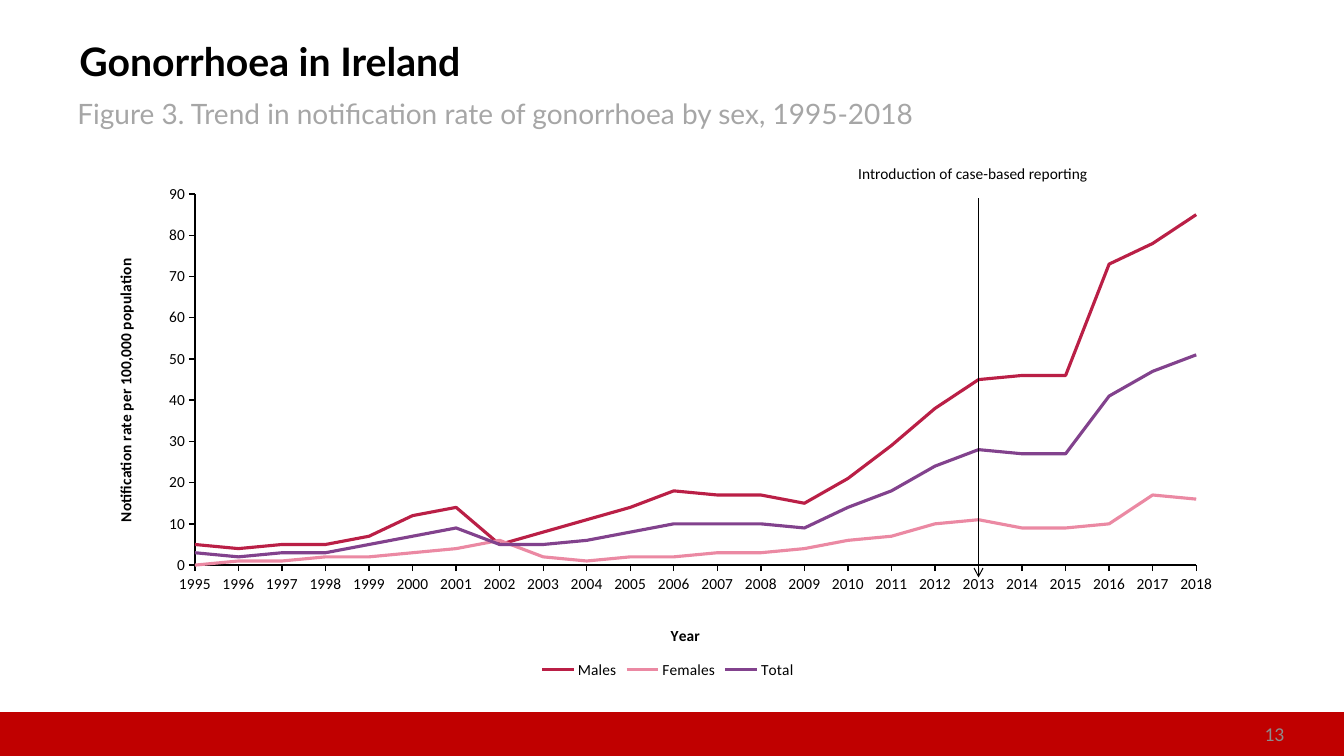
from dataclasses import dataclass

from lxml.etree import SubElement
from pptx import Presentation
from pptx.chart.data import CategoryChartData
from pptx.dml.color import RGBColor
from pptx.enum.chart import XL_CHART_TYPE, XL_LEGEND_POSITION, XL_TICK_MARK
from pptx.enum.shapes import MSO_CONNECTOR, MSO_SHAPE
from pptx.enum.text import MSO_ANCHOR, PP_ALIGN
from pptx.oxml.ns import qn
from pptx.util import Cm, Pt

COLORS = {
    "black": "000000",
    "red": "C00000",
    "subtitle": "A6A6A6",
    "number": "8C8C8C",
    "males": "BA1F46",
    "females": "EB89A3",
    "total": "82428D",
}


@dataclass
class Label:
    text: str
    box: tuple[float, float, float, float]
    size: float
    color: str
    font: str = "Calibri"
    bold: bool = False
    align: PP_ALIGN = PP_ALIGN.LEFT
    anchor: MSO_ANCHOR = MSO_ANCHOR.TOP
    inset: tuple[float, float] = (0.25, 0.13)


@dataclass
class Series:
    name: str
    color: str
    rates: list[int]


@dataclass
class AxisStyle:
    title: str
    title_x: float
    title_y: float


TITLE = Label("Gonorrhoea in Ireland", (1.7, 0.76, 26.24, 1.57), 28, "black", "Lato", True,
              anchor=MSO_ANCHOR.MIDDLE, inset=(0.3, 0.15))
LABELS = [
    Label("13", (24.77, 17.98, 7.9, 1.02), 14, "number", align=PP_ALIGN.RIGHT,
          anchor=MSO_ANCHOR.MIDDLE, inset=(0.3, 0.15)),
    Label("Figure 3. Trend in notification rate of gonorrhoea by sex, 1995-2018",
          (1.7, 2.31, 30.48, 1.12), 20, "subtitle", "Lato"),
    Label("Introduction of case-based reporting", (20.52, 4.01, 8, 0.74), 11, "black",
          align=PP_ALIGN.CENTER),
]
SERIES = [
    Series("Males", "males", [5, 4, 5, 5, 7, 12, 14, 5, 8, 11, 14, 18,
                              17, 17, 15, 21, 29, 38, 45, 46, 46, 73, 78, 85]),
    Series("Females", "females", [0, 1, 1, 2, 2, 3, 4, 6, 2, 1, 2, 2,
                                  3, 3, 4, 6, 7, 10, 11, 9, 9, 10, 17, 16]),
    Series("Total", "total", [3, 2, 3, 3, 5, 7, 9, 5, 5, 6, 8, 10,
                              10, 10, 9, 14, 18, 24, 28, 27, 27, 41, 47, 51]),
]
YEAR_AXIS = AxisStyle("Year", 0.5, 0.88)
RATE_AXIS = AxisStyle("Notification rate per 100,000 population", 0.01, 0.16)


def rgb(name: str) -> RGBColor:
    return RGBColor.from_string(COLORS[name])


def set_font(font, size: float, color: str, name: str = "Calibri", bold: bool = False) -> None:
    font.size, font.name, font.bold = Pt(size), name, bold
    font.color.rgb = rgb(color)


def write_label(sp, label: Label) -> None:
    sp.left, sp.top, sp.width, sp.height = (Cm(v) for v in label.box)
    tf = sp.text_frame
    tf.word_wrap = True
    tf.vertical_anchor = label.anchor
    tf.margin_left = tf.margin_right = Cm(label.inset[0])
    tf.margin_top = tf.margin_bottom = Cm(label.inset[1])
    p = tf.paragraphs[0]
    p.alignment = label.align
    r = p.add_run()
    r.text = label.text
    set_font(r.font, label.size, label.color, label.font, label.bold)


def place(parent, index: int, **fractions: float) -> None:
    """Give a chart part a manual layout in fractions of the chart."""
    for old in parent.findall(qn("c:layout")):
        parent.remove(old)
    layout = SubElement(parent, qn("c:layout"))
    parent.insert(index, layout)
    manual = SubElement(layout, qn("c:manualLayout"))
    if "w" in fractions:
        SubElement(manual, qn("c:layoutTarget")).set("val", "inner")
    for key in ("x", "y"):
        SubElement(manual, qn(f"c:{key}Mode")).set("val", "edge")
    for key, value in fractions.items():
        SubElement(manual, qn(f"c:{key}")).set("val", str(value))


def style_axis(axis, style: AxisStyle) -> None:
    axis.has_major_gridlines = False
    axis.major_tick_mark = XL_TICK_MARK.OUTSIDE
    axis.minor_tick_mark = XL_TICK_MARK.NONE
    axis.format.line.color.rgb = rgb("black")
    axis.format.line.width = Pt(1)
    set_font(axis.tick_labels.font, 11, "black")
    r = axis.axis_title.text_frame.paragraphs[0].add_run()
    r.text = style.title
    set_font(r.font, 11, "black", bold=True)
    place(axis.axis_title.element, 1, x=style.title_x, y=style.title_y)


def add_rate_chart(s) -> None:
    data = CategoryChartData()
    data.categories = [str(year) for year in range(1995, 2019)]
    for series in SERIES:
        data.add_series(series.name, series.rates)
    chart = s.shapes.add_chart(XL_CHART_TYPE.LINE, Cm(2.54), Cm(4.39),
                               Cm(28.58), Cm(12.83), data).chart
    set_font(chart.font, 10, "black")
    chart.has_title = False
    chart.has_legend = True
    chart.legend.position = XL_LEGEND_POSITION.BOTTOM
    chart.legend.include_in_layout = False
    set_font(chart.legend.font, 11, "black")
    chart.plots[0].vary_by_categories = False
    for line, series in zip(chart.plots[0].series, SERIES):
        line.smooth = False
        line.format.line.color.rgb = rgb(series.color)
        line.format.line.width = Pt(2.25)
    style_axis(chart.category_axis, YEAR_AXIS)
    axis = chart.value_axis
    style_axis(axis, RATE_AXIS)
    axis.minimum_scale, axis.maximum_scale = 0, 90
    val_ax = chart.element.find(".//" + qn("c:valAx"))
    cross = val_ax.find(qn("c:crossBetween"))
    if cross is None:
        cross = SubElement(val_ax, qn("c:crossBetween"))
    cross.set("val", "midCat")
    axis.major_unit = 10
    place(chart.element.find(".//" + qn("c:plotArea")), 0, x=0.083, y=0.039, w=0.883, h=0.729)


def add_arrow(s, x: float, top: float, bottom: float) -> None:
    sp = s.shapes.add_connector(MSO_CONNECTOR.STRAIGHT, Cm(x), Cm(top), Cm(x), Cm(bottom))
    sp.line.color.rgb = rgb("black")
    sp.line.width = Pt(0.75)
    SubElement(sp.line._get_or_add_ln(), qn("a:tailEnd")).set("type", "arrow")
    SubElement(sp.element.spPr, qn("a:effectLst"))


def main() -> None:
    prs = Presentation()
    prs.slide_width, prs.slide_height = Cm(33.87), Cm(19.05)
    s = prs.slides.add_slide(prs.slide_layouts[5])
    bar = s.shapes.add_shape(MSO_SHAPE.RECTANGLE, 0, Cm(17.98), prs.slide_width, Cm(1.07))
    bar.shadow.inherit = False
    bar.fill.solid()
    bar.fill.fore_color.rgb = bar.line.color.rgb = rgb("red")
    bar.line.width = Pt(2)
    write_label(s.shapes.title, TITLE)
    add_rate_chart(s)
    add_arrow(s, 24.66, 5, 14.55)
    for label in LABELS:
        write_label(s.shapes.add_textbox(0, 0, 0, 0), label)
    prs.save("out.pptx")


if __name__ == "__main__":
    main()
